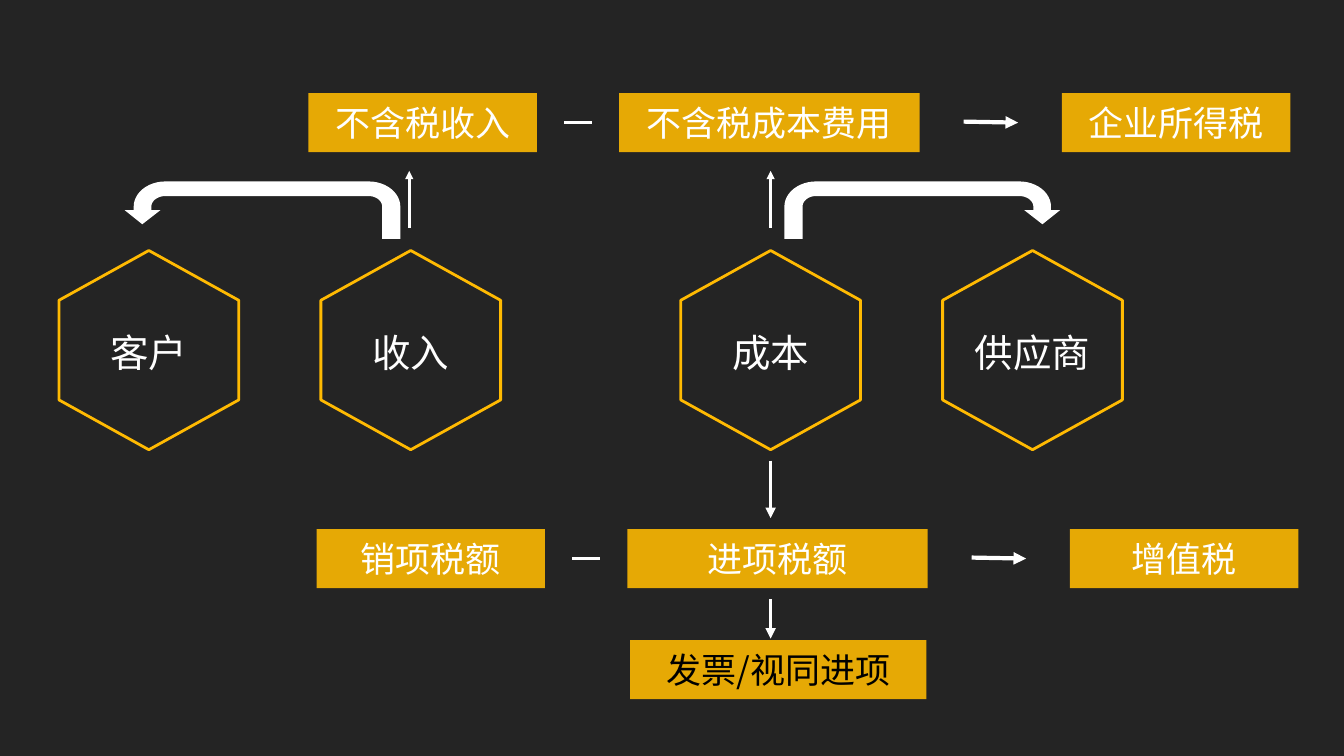
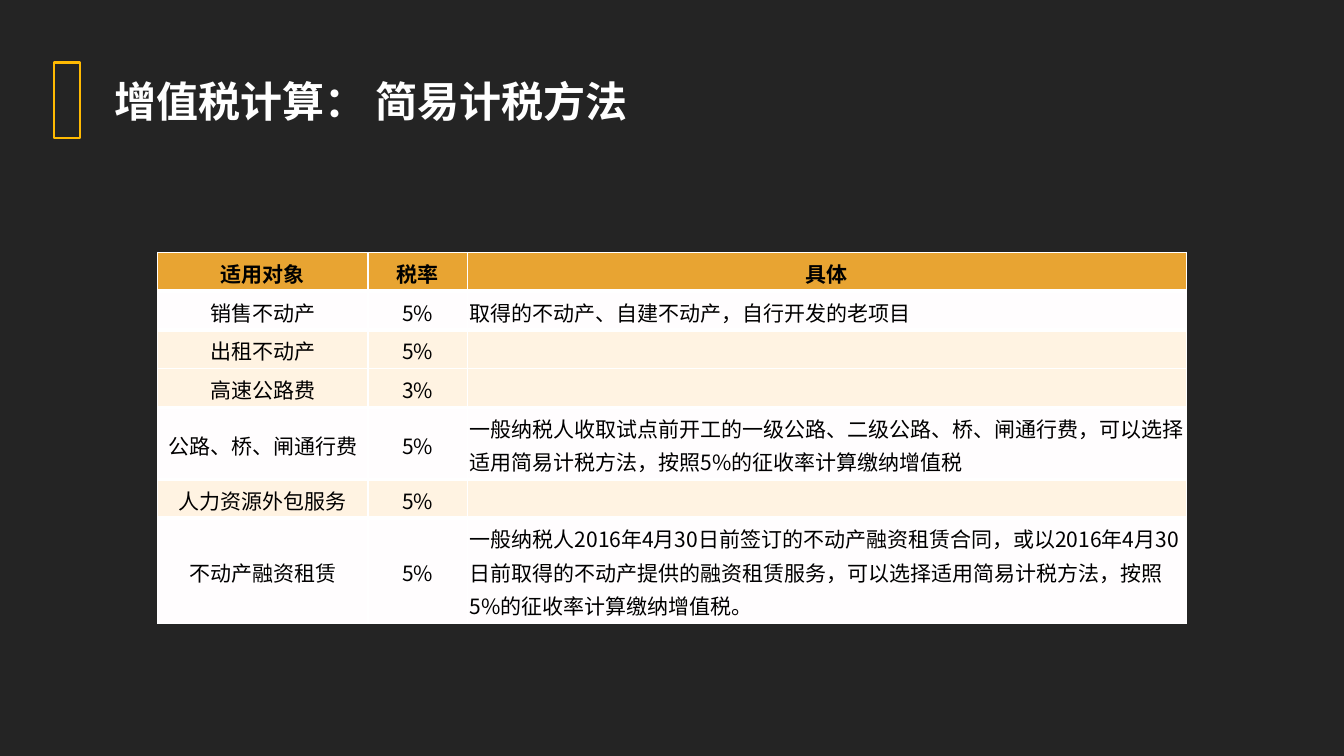
"""Build two dark slides on how value-added tax is worked out."""
import math
from dataclasses import dataclass

import pptx
import pptx.dml.color
import pptx.enum.shapes
import pptx.enum.text
import pptx.oxml
import pptx.oxml.ns
import pptx.util
from lxml import etree

ALIGN = pptx.enum.text.PP_ALIGN
MIDDLE = pptx.enum.text.MSO_ANCHOR.MIDDLE
COLUMNS, ROWS = 80, 45


@dataclass(frozen=True)
class Theme:
    """Colours, fonts and type sizes of the deck."""
    dark: str = "242424"
    white: str = "FFFFFF"
    black: str = "000000"
    gold: str = "FFBA02"
    header: str = "E8A432"
    plain_row: str = "FFFDFE"
    cream_row: str = "FFF3E2"
    sans: str = "Noto Sans CJK SC"
    hexagon_font: str = "Lato"
    title_font: str = "Arial"
    title_size: int = 60
    hexagon_size: int = 55
    box_size: int = 50
    table_size: int = 30


THEME = Theme()


def grid(cells):
    """Turn a number of square grid cells into a length."""
    return pptx.util.Inches(cells / 3)


def rgb(code):
    """Turn a hex code into a colour."""
    return pptx.dml.color.RGBColor.from_string(code)


def add_element(parent, tag, **attributes):
    """Append an XML element to its parent."""
    return etree.SubElement(parent, pptx.oxml.ns.qn(tag), attributes)


def write(frame, text, font, size, color, bold=False, align=ALIGN.CENTER, spacing=None):
    """Fill a text frame with one formatted paragraph."""
    frame.text = text
    para = frame.paragraphs[0]
    para.alignment = align
    para.line_spacing = spacing
    para.font.size = pptx.util.Pt(size)
    para.font.bold = bold
    para.font.color.rgb = rgb(color)
    para.font.name = font
    defaults = para._p.pPr.find(pptx.oxml.ns.qn("a:defRPr"))
    add_element(defaults, "a:ea", typeface=THEME.sans)


def paint(shape, fill=None, line=None, width=0):
    """Set fill and outline, leaving out whichever is not given."""
    shape.shadow.inherit = False
    if fill:
        shape.fill.solid()
        shape.fill.fore_color.rgb = rgb(fill)
    else:
        shape.fill.background()
    if line:
        shape.line.color.rgb = rgb(line)
        shape.line.width = pptx.util.Pt(width)
    else:
        shape.line.fill.background()


def add_rectangle(slide, left, top, width, height):
    """Add a rectangle measured in grid cells."""
    kind = pptx.enum.shapes.MSO_SHAPE.RECTANGLE
    return slide.shapes.add_shape(kind, grid(left), grid(top), grid(width), grid(height))


def add_outline(slide, points):
    """Add a closed freeform through points given in grid cells."""
    start, *rest = [(grid(x), grid(y)) for x, y in points]
    builder = slide.shapes.build_freeform(*start)
    builder.add_line_segments(rest, close=True)
    return builder.convert_to_shape()


def add_label_box(slide, left, top, width, text, color=THEME.white):
    """Add a translucent gold box with a label."""
    box = add_rectangle(slide, left, top, width, 3.51)
    paint(box, fill=THEME.gold)
    solid = box._element.spPr.find(pptx.oxml.ns.qn("a:solidFill"))
    add_element(solid[0], "a:alpha", val="89000")
    box.text_frame.word_wrap = True
    box.text_frame.vertical_anchor = MIDDLE
    write(box.text_frame, text, THEME.sans, THEME.box_size, color)


def add_line(slide, start, end, width, arrow=True):
    """Add a white line, with an arrowhead at its end if wanted."""
    kind = pptx.enum.shapes.MSO_CONNECTOR.STRAIGHT
    line = slide.shapes.add_connector(kind, *map(grid, start + end))
    line.line.color.rgb = rgb(THEME.white)
    line.line.width = pptx.util.Pt(width)
    properties = line._element.spPr
    if arrow:
        add_element(properties.find(pptx.oxml.ns.qn("a:ln")), "a:tailEnd", type="triangle")
    add_element(properties, "a:effectLst")


def add_hexagon(slide, center, text):
    """Add an upright outlined hexagon with its label."""
    half, top, height = 5.35, 14.91, 11.86
    corners = [(0, 0), (1, .25), (1, .75), (0, 1), (-1, .75), (-1, .25)]
    hexagon = add_outline(slide, [(center + x * half, top + y * height) for x, y in corners])
    paint(hexagon, line=THEME.gold, width=4)
    hexagon.text_frame.word_wrap = False
    hexagon.text_frame.vertical_anchor = MIDDLE
    write(hexagon.text_frame, text, THEME.hexagon_font, THEME.hexagon_size,
          THEME.white, spacing=1.1)


def arc(center, radius_x, radius_y, first, last):
    """List points along an elliptical arc, with angles in degrees."""
    steps = 12
    angles = [math.radians(first + (last - first) * step / steps) for step in range(steps + 1)]
    return [(center + radius_x * math.cos(angle), 1.5 + radius_y * math.sin(angle))
            for angle in angles]


def add_turn_arrow(slide, stem, direction):
    """Add a U-turn arrow from its stem edge, to the right (1) or left (-1)."""
    near, far = 1.89, 13.98
    head = [(15.87, 1.71), (16.41, 1.71), (15.36, 2.55), (14.28, 1.71), (14.82, 1.71)]
    points = [(0, 3.42), *arc(near, 1.89, 1.5, 180, 270), *arc(far, 1.89, 1.5, 270, 360),
              *head, *arc(far, .84, .63, 360, 270), *arc(near, .81, .63, 270, 180), (1.08, 3.42)]
    arrow = add_outline(slide, [(stem + direction * x, 10.8 + y) for x, y in points])
    paint(arrow, fill=THEME.white)


def add_equation(slide, left, top, labels):
    """Add a row of boxes reading: first minus second leads to third."""
    for label, offset, width in zip(labels, (0, 18.5, 44.85), (13.6, 17.88, 13.6)):
        add_label_box(slide, left + offset, top, width, label)
    add_line(slide, (left + 15.22, top + 1.75), (left + 16.88, top + 1.75), 5, arrow=False)
    add_line(slide, (left + 39, top + 1.69), (left + 42.24, top + 1.75), 6)


def add_title(slide, text):
    """Place the slide title beside its gold marker."""
    paint(add_rectangle(slide, 3.24, 3.72, 1.53, 4.5), line=THEME.gold, width=3)
    title = slide.shapes.title
    title.left, title.top, title.width, title.height = map(grid, (6.48, 4, 31.2, 3.96))
    frame = title.text_frame
    frame.auto_size = pptx.enum.text.MSO_AUTO_SIZE.NONE
    frame.word_wrap = False
    frame.vertical_anchor = MIDDLE
    write(frame, text, THEME.title_font, THEME.title_size, THEME.white, bold=True)


def set_borders(cell, top, bottom):
    """Draw white cell borders, the upper and lower with given widths."""
    properties = cell._tc.get_or_add_tcPr()
    for tag, width in (("a:lnL", 2), ("a:lnR", 2), ("a:lnT", top), ("a:lnB", bottom)):
        line = add_element(properties, tag, w=str(pptx.util.Pt(width)))
        add_element(add_element(line, "a:solidFill"), "a:srgbClr", val=THEME.white)


def add_rate_table(slide, records):
    """Add the table of tax rates, with its header in the first record."""
    widths = (12.51, 5.91, 42.81)
    heights = (2.22, 2.31, 2.31, 2.31, 3.96, 2.22, 5.73)
    table = slide.shapes.add_table(len(records), len(widths), grid(9.39), grid(15.03),
                                   grid(sum(widths)), grid(sum(heights))).table
    table.first_row = table.horz_banding = False
    for column, width in zip(table.columns, widths):
        column.width = grid(width)
    fills = [THEME.header] + [THEME.plain_row if record[2] else THEME.cream_row
                              for record in records[1:]]
    rules = [2] + [2 if above == below else 6 for above, below in zip(fills, fills[1:])] + [2]
    for index, record in enumerate(records):
        table.rows[index].height = grid(heights[index])
        for place, text in enumerate(record):
            cell = table.cell(index, place)
            set_borders(cell, rules[index], rules[index + 1])
            cell.fill.solid()
            cell.fill.fore_color.rgb = rgb(fills[index])
            cell.margin_left = cell.margin_right = pptx.util.Inches(.05)
            cell.margin_top = cell.margin_bottom = pptx.util.Inches(.05)
            if index:
                cell.vertical_anchor = MIDDLE
            if text:
                align = ALIGN.LEFT if index and place == 2 else ALIGN.CENTER
                write(cell.text_frame, text, THEME.sans, THEME.table_size, THEME.black,
                      bold=index == 0, align=align, spacing=1.1)


def build_tax_flow(deck):
    """Show how income and cost lead to the two taxes."""
    slide = deck.slides.add_slide(deck.slide_layouts[6])
    income, cost, step = 24.45, 45.87, 15.59
    centers = (income - step, income, cost, cost + step)
    for center, text in zip(centers, ("客户", "收入", "成本", "供应商")):
        add_hexagon(slide, center, text)
    for center in (income - .09, cost):
        add_line(slide, (center, 13.56), (center, 10.17), 4)
    add_turn_arrow(slide, 23.83, -1)
    add_turn_arrow(slide, 46.69, 1)
    add_equation(slide, 18.36, 5.55, ("不含税收入", "不含税成本费用", "企业所得税"))
    add_equation(slide, 18.84, 31.5, ("销项税额", "进项税额", "增值税"))
    add_label_box(slide, 37.5, 38.1, 17.64, "发票/视同进项", THEME.black)
    for top, bottom in ((27.42, 30.84), (35.67, 38.01)):
        add_line(slide, (cost, top), (cost, bottom), 5)


def build_simple_method(deck):
    """Show the rates of the simplified method."""
    slide = deck.slides.add_slide(deck.slide_layouts[5])
    add_title(slide, "增值税计算： 简易计税方法")
    add_rate_table(slide, [
        ("适用对象", "税率", "具体"),
        ("销售不动产", "5%", "取得的不动产、自建不动产，自行开发的老项目"),
        ("出租不动产", "5%", ""),
        ("高速公路费", "3%", ""),
        ("公路、桥、闸通行费", "5%",
         "一般纳税人收取试点前开工的一级公路、二级公路、桥、闸通行费，"
         "可以选择适用简易计税方法，按照5%的征收率计算缴纳增值税"),
        ("人力资源外包服务", "5%", ""),
        ("不动产融资租赁", "5%",
         "一般纳税人2016年4月30日前签订的不动产融资租赁合同，"
         "或以2016年4月30日前取得的不动产提供的融资租赁服务，"
         "可以选择适用简易计税方法，按照5%的征收率计算缴纳增值税。"),
    ])


def main():
    """Build and save the deck."""
    deck = pptx.Presentation()
    deck.slide_width, deck.slide_height = grid(COLUMNS), grid(ROWS)
    background = deck.slide_master.background.fill
    background.solid()
    background.fore_color.rgb = rgb(THEME.dark)
    build_tax_flow(deck)
    build_simple_method(deck)
    deck.save("out.pptx")


if __name__ == "__main__":
    main()
